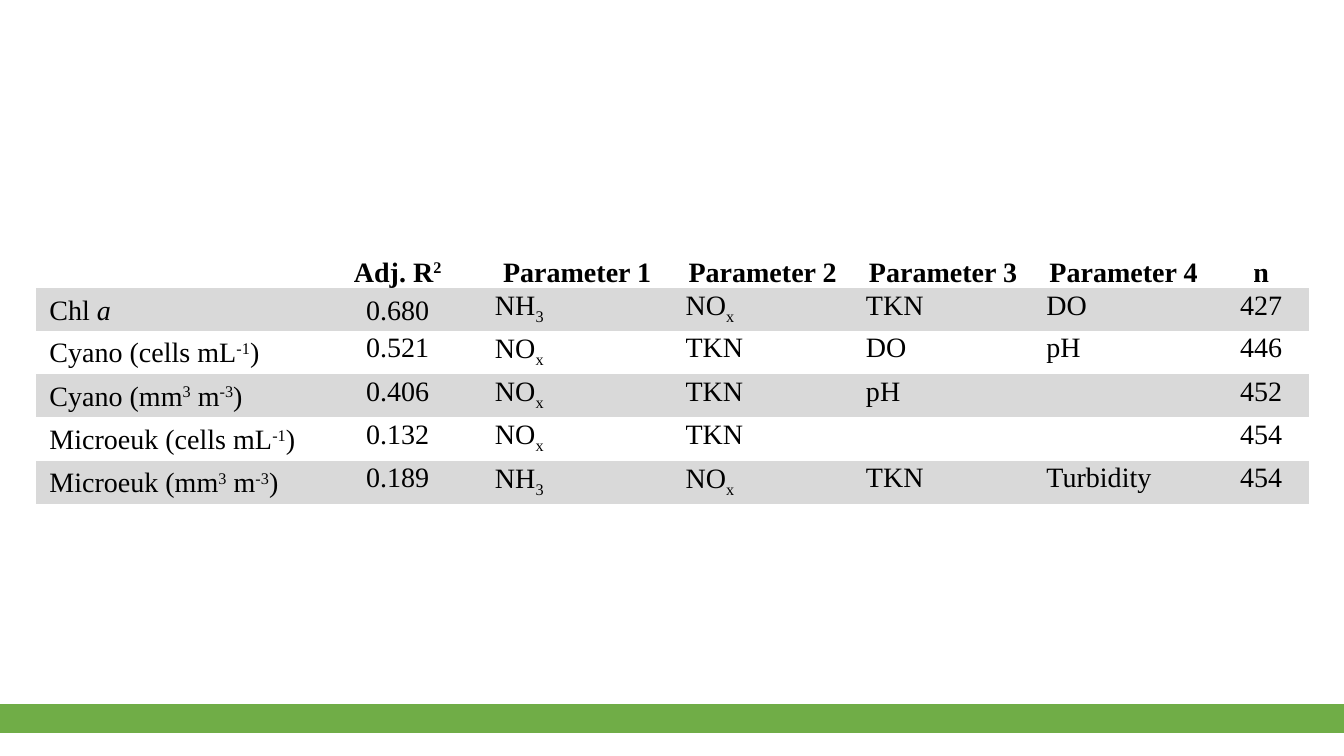
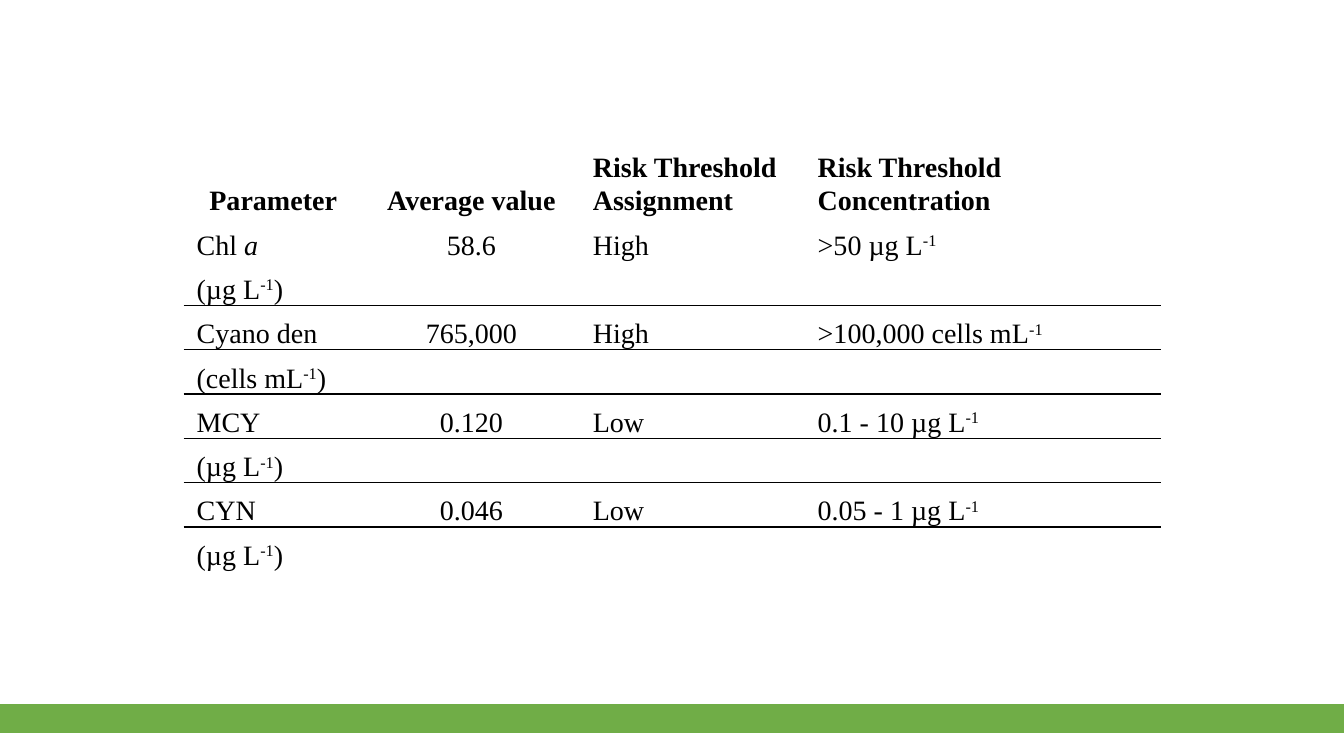
import pptx
import pptx.util
import pptx.dml.color
import pptx.enum.shapes
import pptx.enum.text
import pptx.oxml
import pptx.oxml.ns
from pptx.util import Inches

HUES = {"band": "70AD47", "gray": "D9D9D9", "ink": "000000"}
FONT = "Times New Roman"
PLAIN = "{2D5ABB26-0587-4C30-8999-92F81FD0307C}"  # no style, no grid
ALIGN = {"l": pptx.enum.text.PP_ALIGN.LEFT,
         "c": pptx.enum.text.PP_ALIGN.CENTER}
ANCHOR = {"t": pptx.enum.text.MSO_ANCHOR.TOP,
          "m": pptx.enum.text.MSO_ANCHOR.MIDDLE,
          "b": pptx.enum.text.MSO_ANCHOR.BOTTOM}
SHIFT = {"^": "30000", "~": "-25000"}


def hue(name):
    return pptx.dml.color.RGBColor.from_string(HUES[name])


def split(text):
    """Yield (piece, mark): ^raised^, ~lowered~, *italic* or plain."""
    piece, mark = "", ""
    for char in text:
        if char in "^~*":
            if piece:
                yield piece, mark
            piece, mark = "", "" if mark else char
        else:
            piece += char
    if piece:
        yield piece, mark


def write(frame, text, size=20, bold=False, align="l", color="ink"):
    para = frame.paragraphs[0]
    para.alignment = ALIGN[align]
    para.line_spacing = 1.07
    for piece, mark in split(text):
        run = para.add_run()
        run.text = piece
        font = run.font
        font.name, font.size = FONT, pptx.util.Pt(size)
        font.bold, font.italic = bold, mark == "*"
        font.color.rgb = hue(color)
        if mark in SHIFT:
            run._r.get_or_add_rPr().set("baseline", SHIFT[mark])


class Deck:
    def __init__(self):
        self.prs = pptx.Presentation()
        self.prs.slide_width = Inches(13.33)
        self.prs.slide_height = Inches(7.5)
        self.slide = None

    def page(self):
        self.slide = self.prs.slides.add_slide(self.prs.slide_layouts[6])
        self.band()

    def band(self):
        bar = self.slide.shapes.add_shape(
            pptx.enum.shapes.MSO_SHAPE.RECTANGLE,
            0, Inches(6.99), Inches(13.33), Inches(0.28))
        bar.shadow.inherit = False
        bar.fill.solid()
        bar.fill.fore_color.rgb = hue("band")
        bar.line.color.rgb = hue("band")
        bar.line.width = pptx.util.Pt(1)

    def rule(self, cell, side):
        cell._tc.get_or_add_tcPr().append(pptx.oxml.parse_xml(
            f'<a:ln{side} {pptx.oxml.ns.nsdecls("a")} w="12700"><a:solidFill>'
            f'<a:srgbClr val="{HUES["ink"]}"/></a:solidFill></a:ln{side}>'))

    def cell(self, cell, text, anchor, fill=None, **form):
        cell.margin_left = cell.margin_right = Inches(0.13)
        cell.margin_top = cell.margin_bottom = 0
        cell.vertical_anchor = ANCHOR[anchor]
        if fill:
            cell.fill.solid()
            cell.fill.fore_color.rgb = hue(fill)
        else:
            cell.fill.background()
        write(cell.text_frame, text, **form)

    def table(self, left, top, cols, highs, rows, head, body, anchors,
              gray=(), ruled=()):
        """Rows in gray are shaded; rows in ruled have a line below."""
        grid = self.slide.shapes.add_table(
            len(rows), len(cols), Inches(left), Inches(top),
            Inches(sum(cols)), Inches(sum(highs))).table
        grid.first_row = grid.horz_banding = False
        grid._tbl.tblPr.find(pptx.oxml.ns.qn("a:tableStyleId")).text = PLAIN
        for col, width in zip(grid.columns, cols):
            col.width = Inches(width)
        for r, (row, high) in enumerate(zip(rows, highs)):
            grid.rows[r].height = Inches(high)
            for c, text in enumerate(row):
                cell = grid.cell(r, c)
                if r - 1 in ruled:
                    self.rule(cell, "T")
                if r in ruled:
                    self.rule(cell, "B")
                self.cell(cell, text, anchors[r][c],
                          fill="gray" if r in gray else None,
                          bold=r == 0, align=(body if r else head)[c])


def main():
    deck = Deck()

    # Regression models
    deck.page()
    deck.table(
        0.36, 2.44, [2.75, 1.67, 1.89, 1.79, 1.79, 1.79, 0.94],
        [0.42] * 2 + [0.43] * 4,
        [["", "Adj. R^2^", *(f"Parameter {i}" for i in range(1, 5)), "n"],
         ["Chl *a*", "0.680", "NH~3~", "NO~x~", "TKN", "DO", "427"],
         ["Cyano (cells mL^-1^)", "0.521", "NO~x~", "TKN", "DO", "pH", "446"],
         ["Cyano (mm^3^ m^-3^)", "0.406", "NO~x~", "TKN", "pH", "", "452"],
         ["Microeuk (cells mL^-1^)", "0.132", "NO~x~", "TKN", "", "", "454"],
         ["Microeuk (mm^3^ m^-3^)", "0.189", "NH~3~", "NO~x~", "TKN",
          "Turbidity", "454"]],
        head="c" * 7, body="lcllllc",
        anchors=["b" * 7, "mmttttt"] + ["mtttttt"] * 4, gray=(1, 3, 5))

    # Risk thresholds: each parameter has a value row and a unit row
    deck.page()
    risks = [
        ("Chl *a*", "58.6", "High", ">50 µg L^-1^", "(µg L^-1^)"),
        ("Cyano den", "765,000", "High", ">100,000 cells mL^-1^",
         "(cells mL^-1^)"),
        ("MCY", "0.120", "Low", "0.1 - 10 µg L^-1^", "(µg L^-1^)"),
        ("CYN", "0.046", "Low", "0.05 - 1 µg L^-1^", "(µg L^-1^)")]
    rows = [["Parameter", "Average value", "Risk Threshold Assignment",
             "Risk Threshold Concentration"]]
    for *vals, unit in risks:
        rows += [vals, [unit, "", "", ""]]
    deck.table(
        1.82, 1.42, [1.78, 2.15, 2.23, 3.54], [0.73] + [0.44] * 8, rows,
        head="ccll", body="lcll", anchors=["bbbb"] * 9, ruled=(2, 4, 6))

    deck.prs.save("out.pptx")


if __name__ == "__main__":
    main()
